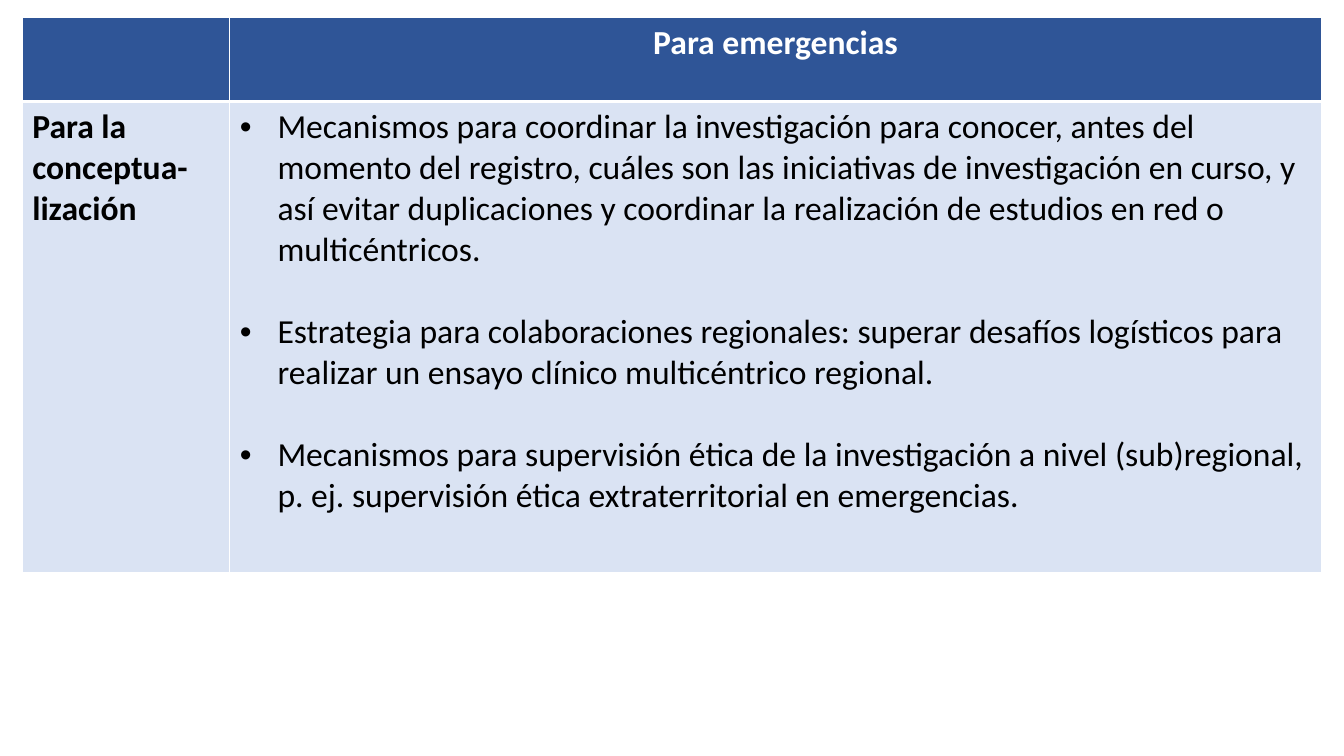
"""Build a slide with a table of research mechanisms for emergencies."""
from lxml import etree
from pptx import Presentation, util as u
from pptx.dml.color import RGBColor
from pptx.enum import text
from pptx.oxml import ns

HEADER = "Para emergencias"
STAGE = "Para la conceptua-lización"
MECHANISMS = [
    "Mecanismos para coordinar la investigación para conocer, antes del momento del registro, "
    "cuáles son las iniciativas de investigación en curso, y así evitar duplicaciones y "
    "coordinar la realización de estudios en red o multicéntricos.",
    "Estrategia para colaboraciones regionales: superar desafíos logísticos para realizar "
    "un ensayo clínico multicéntrico regional.",
    "Mecanismos para supervisión ética de la investigación a nivel (sub)regional, p. ej. "
    "supervisión ética extraterritorial en emergencias.",
]
ROWS = [
    dict(height=2.13, fill="2F5597", bottom=3, cells=[
        dict(lines=[]),
        dict(lines=[HEADER], color="FFFFFF", bold=True, align=text.PP_ALIGN.CENTER)]),
    dict(height=11.86, fill="DAE3F3", bottom=1, cells=[
        dict(lines=[STAGE], bold=True),
        dict(lines=MECHANISMS, bullet=True, gap=29.3)]),
]
WIDTHS = [5.23, 27.51]
LEFT, TOP = 0.56, 0.43
INDENT = 0.95


def rgb(value):
    return RGBColor.from_string(value)


def write(tf, lines, color="000000", bold=False, align=None, bullet=False, gap=0, size=24):
    for i, line in enumerate(lines):
        p = tf.add_paragraph() if i else tf.paragraphs[0]
        if bullet:
            pPr = p._p.get_or_add_pPr()
            pPr.set("marL", str(u.Cm(INDENT)))
            pPr.set("indent", str(-u.Cm(INDENT)))
            etree.SubElement(pPr, ns.qn("a:buFont")).set("typeface", "Arial")
            etree.SubElement(pPr, ns.qn("a:buChar")).set("char", "•")
        if align is not None:
            p.alignment = align
        if i:
            p.space_before = u.Pt(gap)
        r = p.add_run()
        r.text = line
        r.font.name, r.font.size, r.font.bold = "Calibri", u.Pt(size), bold
        r.font.color.rgb = rgb(color)


def set_borders(cell, top, bottom, color="FFFFFF"):
    tcPr = cell._tc.get_or_add_tcPr()
    sides = [("L", 1), ("R", 1), ("T", top), ("B", bottom)]
    for i, (side, width) in enumerate(sides):
        ln = etree.Element(ns.qn(f"a:ln{side}"), w=str(u.Pt(width)))
        fill = etree.SubElement(ln, ns.qn("a:solidFill"))
        etree.SubElement(fill, ns.qn("a:srgbClr")).set("val", color)
        tcPr.insert(i, ln)


def main():
    prs = Presentation()
    prs.slide_width, prs.slide_height = u.Cm(33.87), u.Cm(19.05)
    s = prs.slides.add_slide(prs.slide_layouts[6])
    heights = [row["height"] for row in ROWS]
    table = s.shapes.add_table(len(ROWS), len(WIDTHS), u.Cm(LEFT), u.Cm(TOP),
                               u.Cm(sum(WIDTHS)), u.Cm(sum(heights))).table
    for column, width in zip(table.columns, WIDTHS):
        column.width = u.Cm(width)
    top = 1
    for i, row in enumerate(ROWS):
        table.rows[i].height = u.Cm(row["height"])
        for j, content in enumerate(row["cells"]):
            cell = table.cell(i, j)
            cell.fill.solid()
            cell.fill.fore_color.rgb = rgb(row["fill"])
            set_borders(cell, top, row["bottom"])
            write(cell.text_frame, **content)
        top = row["bottom"]
    prs.save("out.pptx")


if __name__ == "__main__":
    main()
